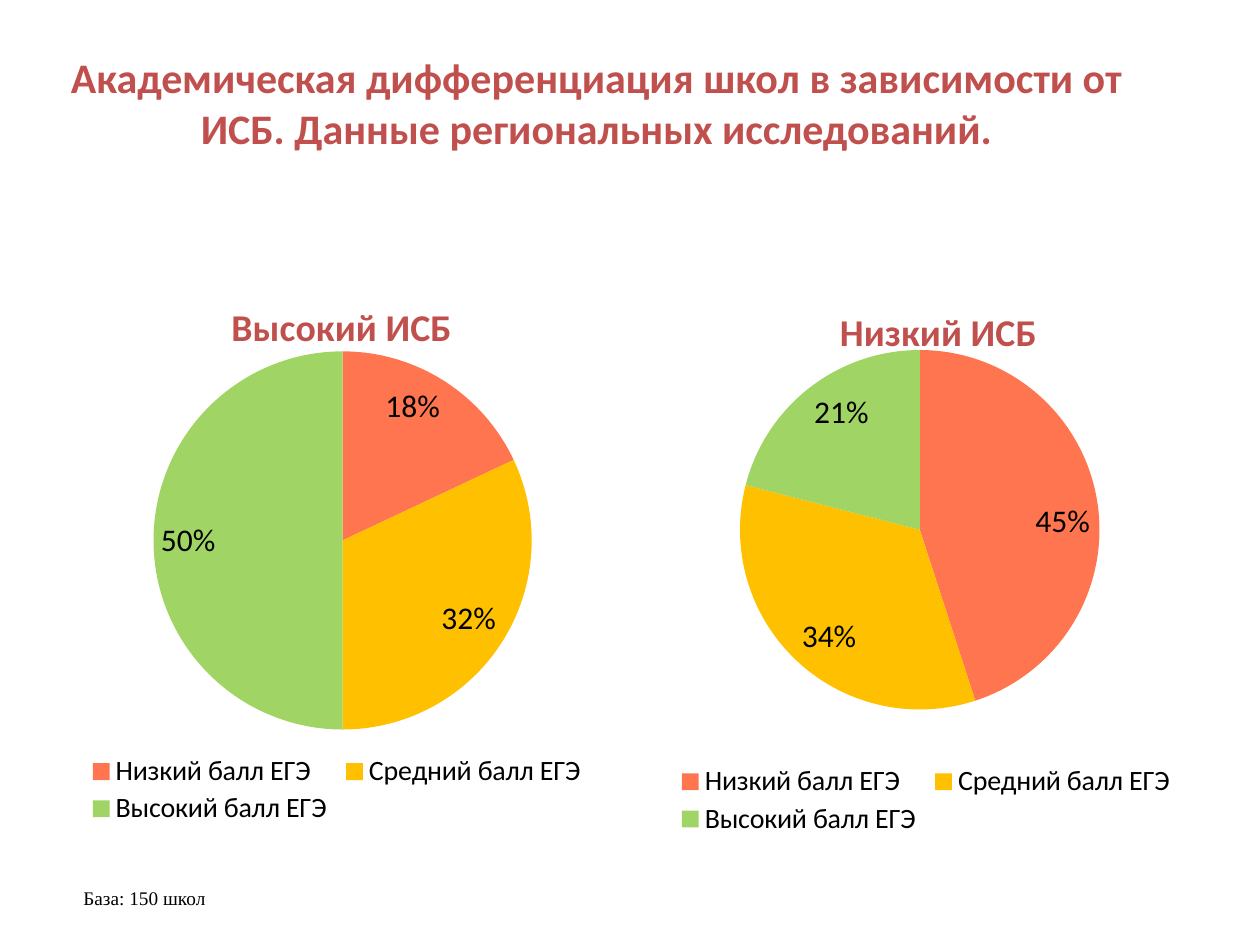
from lxml.etree import SubElement
from pptx import Presentation
from pptx.chart.data import CategoryChartData
from pptx.dml.color import RGBColor
from pptx.enum.chart import XL_CHART_TYPE, XL_LABEL_POSITION, XL_LEGEND_POSITION
from pptx.enum.text import MSO_ANCHOR, MSO_AUTO_SIZE, PP_ALIGN
from pptx.oxml.ns import qn
from pptx.util import Pt

RED = "C0504D"
BLACK = "000000"
SLICES = {
    "Низкий балл ЕГЭ": "FF754F",
    "Средний балл ЕГЭ": "FFC000",
    "Высокий балл ЕГЭ": "A0D565",
}


def color(value):
    """Turn a hex string into a colour."""
    return RGBColor.from_string(value)


def apply_format(target, values):
    """Set every attribute named in a dict of format values."""
    for name, value in values.items():
        setattr(target, name, value)


def set_layout(parent, index, frame, inner=False):
    """Place a chart part by fractions of the chart: left, top, width, height."""
    for old in parent.findall(qn("c:layout")):
        parent.remove(old)
    layout = SubElement(parent, qn("c:layout"))
    parent.insert(index, layout)
    manual = SubElement(layout, qn("c:manualLayout"))
    if inner:
        SubElement(manual, qn("c:layoutTarget")).set("val", "inner")
    for tag in ("xMode", "yMode"):
        SubElement(manual, qn(f"c:{tag}")).set("val", "edge")
    for tag, value in zip("xywh", frame):
        SubElement(manual, qn(f"c:{tag}")).set("val", str(value))


class SlideWriter:
    """Holds the style and the current page."""

    def __init__(self, page, font="Calibri"):
        self.page = page
        self.font = font

    def style(self, font, size, shade, bold=False, name=None):
        """Format a font."""
        apply_format(font, {"name": name or self.font, "size": Pt(size), "bold": bold})
        font.color.rgb = color(shade)

    def text(self, frame, words, align, size, shade, bold=False, name=None):
        """Add a text box with one paragraph."""
        box = self.page.shapes.add_textbox(*map(Pt, frame))
        apply_format(box.text_frame, {
            "word_wrap": True,
            "auto_size": MSO_AUTO_SIZE.NONE,
            "vertical_anchor": MSO_ANCHOR.MIDDLE,
        })
        para = box.text_frame.paragraphs[0]
        para.alignment = align
        span = para.add_run()
        span.text = words
        self.style(span.font, size, shade, bold, name)

    def pie(self, frame, title, values, title_at, plot_at, legend_at):
        """Add a pie chart with a title, percent labels and a legend."""
        data = CategoryChartData()
        data.categories = list(SLICES)
        data.add_series("Series 1", values)
        chart = self.page.shapes.add_chart(
            XL_CHART_TYPE.PIE, *map(Pt, frame), data).chart
        self.style(chart.font, 18, BLACK)

        chart.has_title = True
        chart.chart_title.include_in_layout = False
        span = chart.chart_title.text_frame.paragraphs[0].add_run()
        span.text = title
        self.style(span.font, 21.6, RED, True)

        chart.has_legend = True
        apply_format(chart.legend, {
            "position": XL_LEGEND_POSITION.BOTTOM, "include_in_layout": False})
        self.style(chart.legend.font, 16, BLACK)

        plot = chart.plots[0]
        plot.vary_by_categories = True
        plot.has_data_labels = True
        apply_format(plot.data_labels, {
            "show_percentage": True,
            "show_value": False,
            "number_format": "0%",
            "number_format_is_linked": False,
            "position": XL_LABEL_POSITION.INSIDE_END,
        })
        self.style(plot.data_labels.font, 18, BLACK)
        for index, shade in enumerate(SLICES.values()):
            part = plot.series[0].points[index].format
            part.fill.solid()
            part.fill.fore_color.rgb = color(shade)
            part.line.fill.background()

        root = chart.element if hasattr(chart, "element") else chart._chartSpace
        area = root.find(qn("c:chart"))
        set_layout(area.find(qn("c:title")), 1, title_at)
        set_layout(area.find(qn("c:plotArea")), 0, plot_at, inner=True)
        set_layout(area.find(qn("c:legend")), 1, legend_at)


def main():
    """Build the deck."""
    deck = Presentation()
    apply_format(deck, {"slide_width": Pt(720), "slide_height": Pt(540)})
    writer = SlideWriter(deck.slides.add_slide(deck.slide_layouts[6]))
    writer.text(
        (26.6, 37.4, 628.6, 41.8),
        "Академическая дифференциация школ в зависимости от ИСБ. "
        "Данные региональных исследований.",
        PP_ALIGN.CENTER, 24, RED, True)
    writer.pie((20.2, 133.9, 337.7, 339.8), "Высокий ИСБ", (18, 32, 50),
               (0.32, 0.1), (0.2, 0.12, 0.64, 0.79), (0.08, 0.87, 0.86, 0.13))
    writer.pie((348.5, 139.7, 354.2, 339.8), "Низкий ИСБ", (45, 34, 21),
               (0.36, 0.09), (0.21, 0.12, 0.58, 0.72), (0.1, 0.87, 0.82, 0.13))
    writer.text((31, 502.6, 93.6, 20.9), "База: 150 школ",
                PP_ALIGN.RIGHT, 11, BLACK, name="Times New Roman")
    deck.save("out.pptx")


if __name__ == "__main__":
    main()
